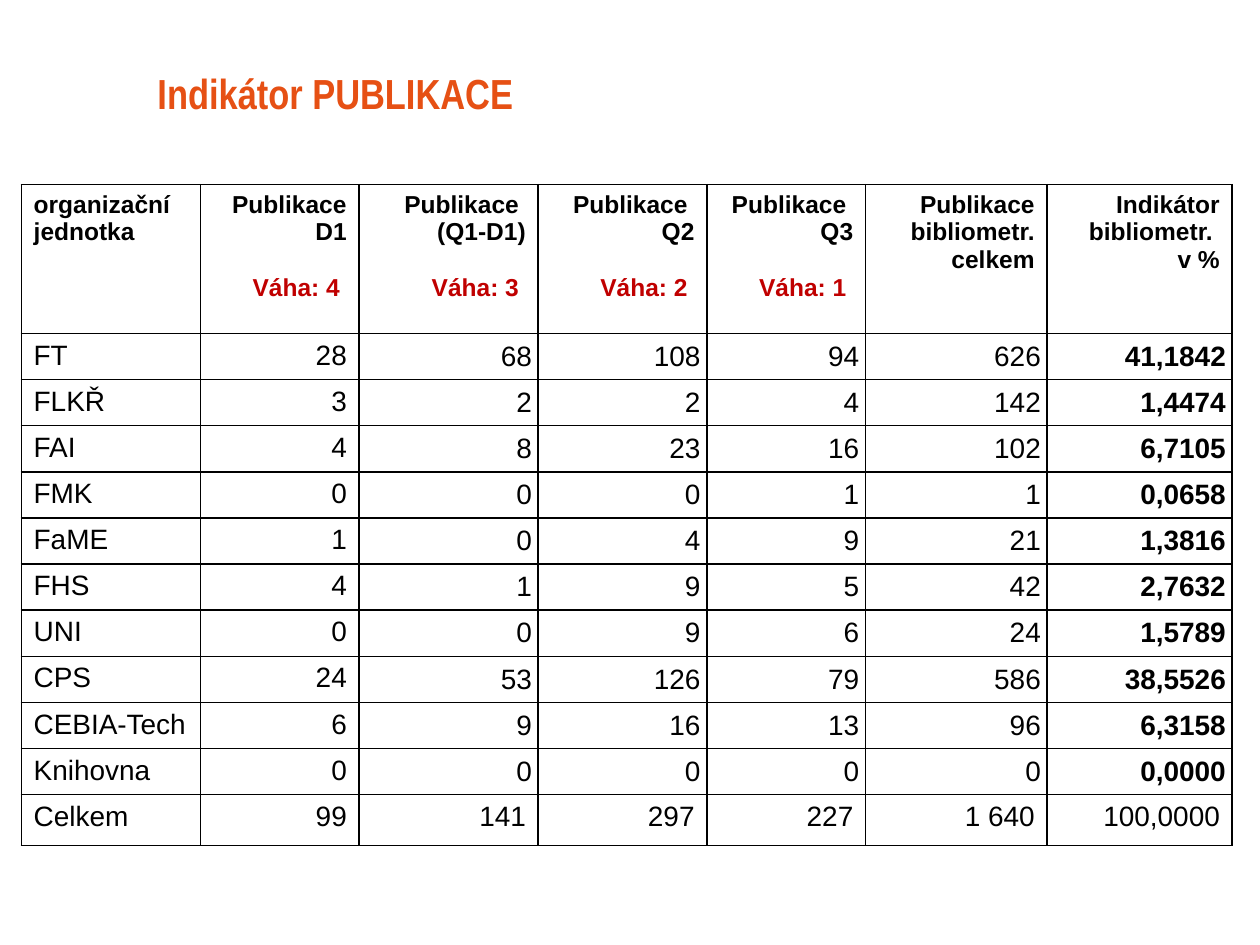
from dataclasses import dataclass

from lxml.etree import SubElement
from pptx import Presentation
from pptx.dml.color import RGBColor
from pptx.enum.text import MSO_ANCHOR, PP_ALIGN
from pptx.oxml.ns import qn
from pptx.util import Cm, Pt

HUES = {"title": "E65014", "text": "000000", "weight": "C00000"}
WIDTHS = [3.61, 3.2, 3.61, 3.4, 3.2, 3.66, 3.73]
HEIGHTS = [3.0] + [0.93] * 10 + [1.02]


@dataclass
class Head:
    text: str
    weight: str = ""


@dataclass
class Look:
    size: int
    bold: bool = False
    tight: bool = False
    right: bool = True


HEADS = [
    Head("organizační jednotka"),
    Head("Publikace\nD1", "Váha: 4 "),
    Head("Publikace \n(Q1-D1)", "Váha: 3 "),
    Head("Publikace \nQ2", "Váha: 2 "),
    Head("Publikace \nQ3", "Váha: 1 "),
    Head("Publikace\nbibliometr. celkem"),
    Head("Indikátor bibliometr. \nv %"),
]
UNITS = [
    ["FT", "28", "68", "108", "94", "626", "41,1842"],
    ["FLKŘ", "3", "2", "2", "4", "142", "1,4474"],
    ["FAI", "4", "8", "23", "16", "102", "6,7105"],
    ["FMK", "0", "0", "0", "1", "1", "0,0658"],
    ["FaME", "1", "0", "4", "9", "21", "1,3816"],
    ["FHS", "4", "1", "9", "5", "42", "2,7632"],
    ["UNI", "0", "0", "9", "6", "24", "1,5789"],
    ["CPS", "24", "53", "126", "79", "586", "38,5526"],
    ["CEBIA-Tech", "6", "9", "16", "13", "96", "6,3158"],
    ["Knihovna", "0", "0", "0", "0", "0", "0,0000"],
]
TOTAL = ["Celkem", "99", "141", "297", "227", "1 640", "100,0000"]


def style(run, face: str, size: int, bold: bool, hue: str) -> None:
    font = run.font
    font.name, font.size, font.bold = face, Pt(size), bold
    font.color.rgb = RGBColor.from_string(HUES[hue])


def frame(cell) -> None:
    props = cell._tc.get_or_add_tcPr()
    for side in ("lnL", "lnR", "lnT", "lnB"):
        line = SubElement(props, qn(f"a:{side}"), w=str(Pt(1)))
        fill = SubElement(line, qn("a:solidFill"))
        SubElement(fill, qn("a:srgbClr"), val=HUES["text"])
    cell.fill.background()


def write(cell, text: str, look: Look) -> None:
    frame(cell)
    cell.margin_left = cell.margin_right = Cm(0.13 if look.tight else 0.25)
    cell.margin_top = cell.margin_bottom = Cm(0 if look.tight else 0.13)
    cell.vertical_anchor = MSO_ANCHOR.MIDDLE if look.tight else MSO_ANCHOR.TOP
    cell.text_frame.text = text
    for para in cell.text_frame.paragraphs:
        para.alignment = PP_ALIGN.RIGHT if look.right else PP_ALIGN.LEFT
        for run in para.runs:
            style(run, "Arial", look.size, look.bold, "text")


def weigh(cell, text: str) -> None:
    para = cell.text_frame.add_paragraph()
    para.text = text
    para.alignment = PP_ALIGN.RIGHT
    para.space_before = Pt(16)
    style(para.runs[0], "Arial", 14, True, "weight")


def add_title(slide) -> None:
    title = slide.shapes.title
    title.left, title.top = Cm(2.92), Cm(0.91)
    title.width, title.height = Cm(21.92), Cm(1.93)
    body = title.text_frame
    body.text = "Indikátor PUBLIKACE"
    body.vertical_anchor = MSO_ANCHOR.MIDDLE
    body.paragraphs[0].alignment = PP_ALIGN.LEFT
    style(body.paragraphs[0].runs[0], "Arial Narrow", 24, True, "title")


def add_grid(slide) -> None:
    shape = slide.shapes.add_table(
        len(HEIGHTS), len(WIDTHS), Cm(0.43), Cm(3.72),
        Cm(sum(WIDTHS)), Cm(sum(HEIGHTS)))
    grid = shape.table
    grid.first_row = grid.horz_banding = False
    for column, width in zip(grid.columns, WIDTHS):
        column.width = Cm(width)
    for row, height in zip(grid.rows, HEIGHTS):
        row.height = Cm(height)
    for col, head in enumerate(HEADS):
        cell = grid.cell(0, col)
        write(cell, head.text, Look(14, bold=True, right=col > 0))
        if head.weight:
            weigh(cell, head.weight)
    last = len(WIDTHS) - 1
    for row, unit in enumerate(UNITS, 1):
        for col, text in enumerate(unit):
            look = Look(16, col == last, col > 1, col > 0)
            write(grid.cell(row, col), text, look)
    for col, text in enumerate(TOTAL):
        write(grid.cell(len(UNITS) + 1, col), text, Look(16, right=col > 0))


def main() -> None:
    deck = Presentation()
    deck.slide_width, deck.slide_height = Cm(25.4), Cm(19.05)
    slide = deck.slides.add_slide(deck.slide_layouts[5])
    add_title(slide)
    add_grid(slide)
    deck.save("out.pptx")


if __name__ == "__main__":
    main()
